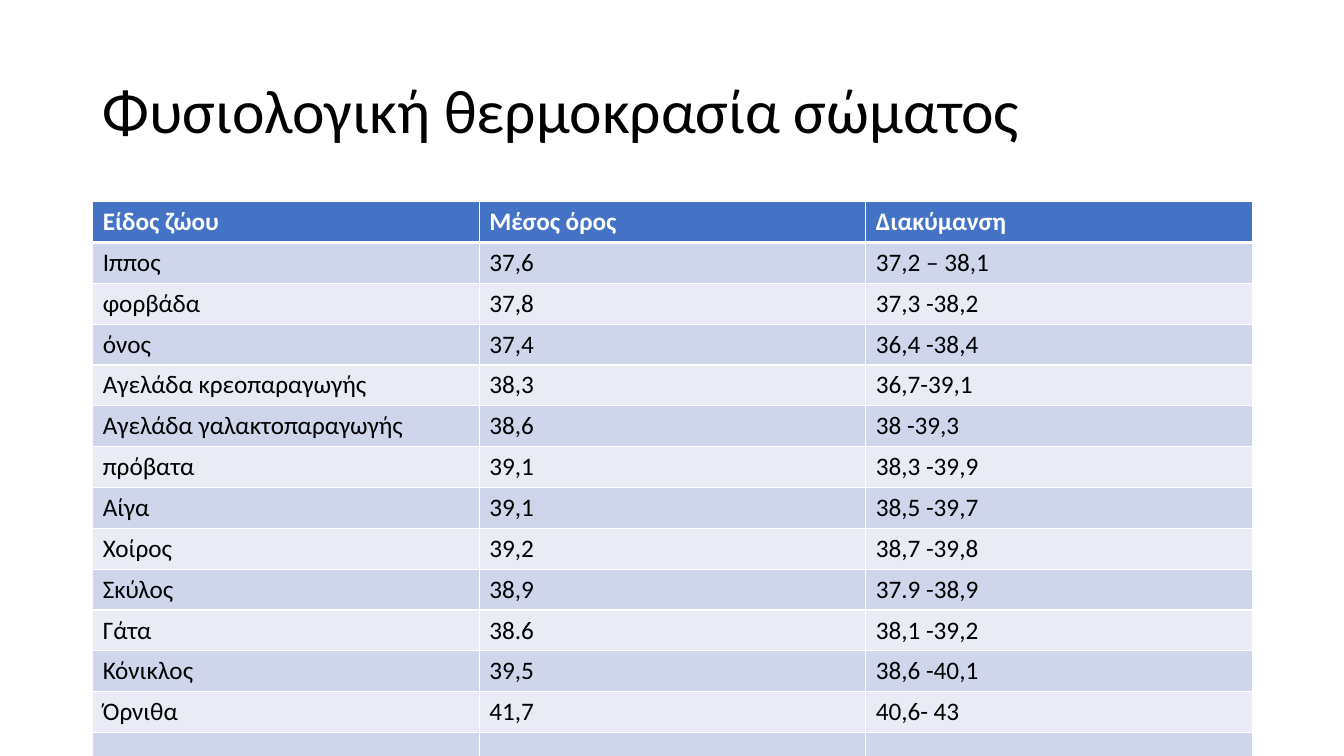
import pptx
import pptx.dml.color
import pptx.enum.text
import pptx.oxml
import pptx.oxml.ns
import pptx.util
from pptx.util import Inches

HEADER = ("Είδος ζώου", "Μέσος όρος", "Διακύμανση")
TEMPERATURES = [
    ("Ιππος", "37,6", "37,2 – 38,1"),
    ("φορβάδα", "37,8", "37,3 -38,2"),
    ("όνος", "37,4", "36,4 -38,4"),
    ("Αγελάδα κρεοπαραγωγής", "38,3", "36,7-39,1"),
    ("Αγελάδα γαλακτοπαραγωγής", "38,6", "38 -39,3"),
    ("πρόβατα", "39,1", "38,3 -39,9"),
    ("Αίγα", "39,1", "38,5 -39,7"),
    ("Χοίρος", "39,2", "38,7 -39,8"),
    ("Σκύλος", "38,9", "37.9 -38,9"),
    ("Γάτα", "38.6", "38,1 -39,2"),
    ("Κόνικλος", "39,5", "38,6 -40,1"),
    ("Όρνιθα", "41,7", "40,6- 43"),
]
EMPTY_ROWS = 2
HEADER_FILL = "4472C4"
BAND_FILLS = ("E9EBF5", "CFD5EA")


def rgb(value):
    return pptx.dml.color.RGBColor.from_string(value)


def write(tf, text, size=18, color="000000", bold=False, spacing=None):
    p = tf.paragraphs[0]
    if spacing:
        p.line_spacing = spacing
    r = p.add_run()
    r.text = text
    r.font.name = "Calibri"
    r.font.size = pptx.util.Pt(size)
    r.font.bold = bold
    r.font.color.rgb = rgb(color)


def set_borders(cell, **widths):
    """Draw white borders; widths in points are keyed by side: L, R, T, B."""
    tc_pr = cell._tc.get_or_add_tcPr()
    for side, width in widths.items():
        tc_pr.append(pptx.oxml.parse_xml(
            f'<a:ln{side} {pptx.oxml.ns.nsdecls("a")} w="{pptx.util.Pt(width)}">'
            '<a:solidFill><a:srgbClr val="FFFFFF"/></a:solidFill>'
            f'</a:ln{side}>'))


def add_title(s, left, top, width, height):
    tf = s.shapes.add_textbox(left, top, width, height).text_frame
    tf.word_wrap = True
    tf.vertical_anchor = pptx.enum.text.MSO_ANCHOR.MIDDLE
    write(tf, "Φυσιολογική θερμοκρασία σώματος", size=44, spacing=0.9)


def add_temperature_table(s, left, top, width, height):
    rows = [HEADER, *TEMPERATURES] + [("",) * len(HEADER)] * EMPTY_ROWS
    table = s.shapes.add_table(
        len(rows), len(HEADER), left, top, width, height).table
    for i, row in enumerate(rows):
        is_header = i == 0
        for j, text in enumerate(row):
            cell = table.cell(i, j)
            set_borders(cell, L=1, R=1, T=3 if i == 1 else 1,
                        B=3 if is_header else 1)
            cell.fill.solid()
            cell.fill.fore_color.rgb = rgb(
                HEADER_FILL if is_header else BAND_FILLS[i % 2])
            if text:
                write(cell.text_frame, text, bold=is_header,
                      color="FFFFFF" if is_header else "000000")


def main():
    prs = pptx.Presentation()
    prs.slide_width, prs.slide_height = Inches(13.33), Inches(7.5)
    s = prs.slides.add_slide(prs.slide_layouts[6])
    left, width = Inches(0.92), Inches(11.5)
    add_title(s, left, Inches(0.4), width, Inches(1.45))
    add_temperature_table(s, left, Inches(2), width, Inches(6.08))
    prs.save("out.pptx")


if __name__ == "__main__":
    main()
